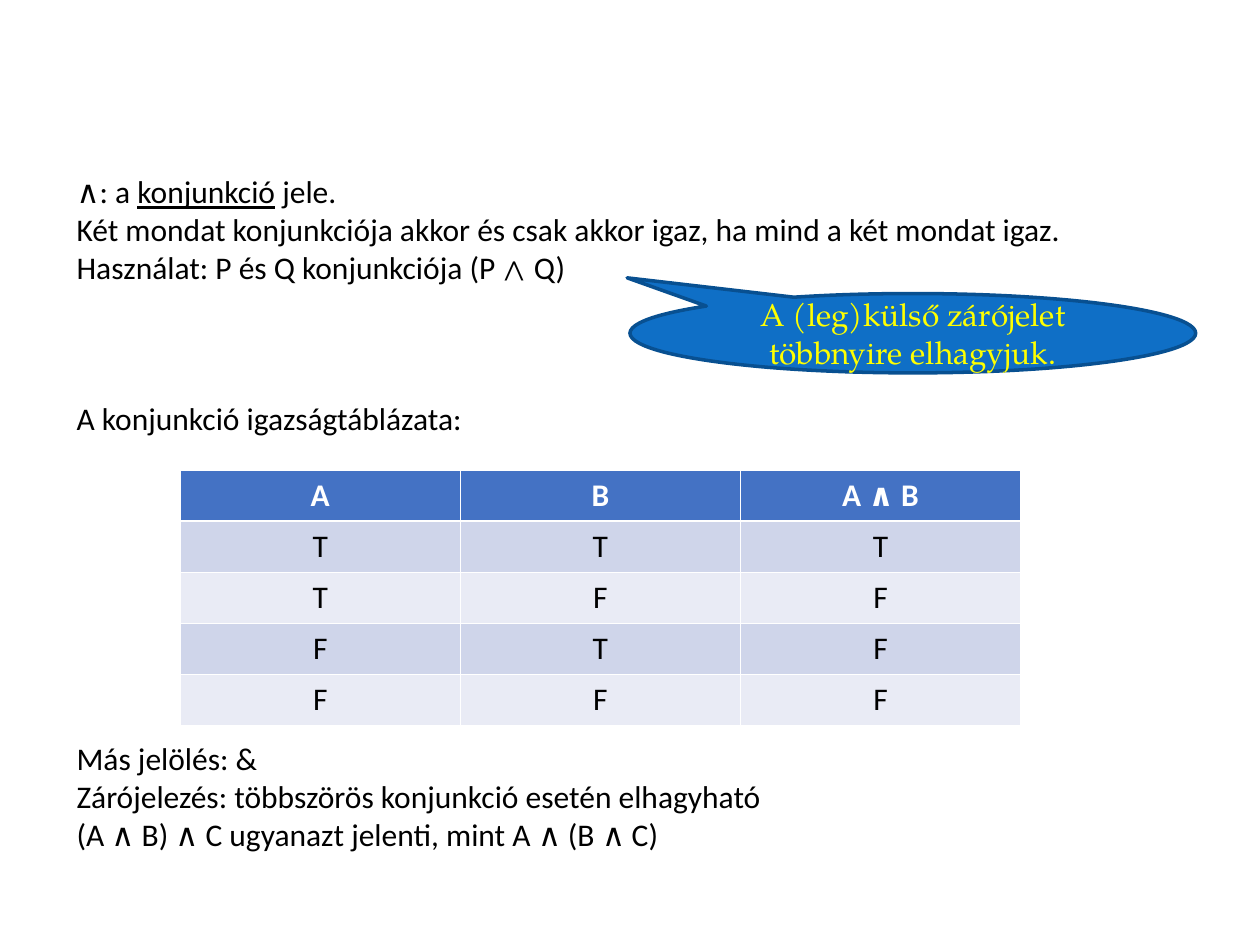
from pptx import Presentation
from pptx.dml.color import RGBColor
from pptx.enum.shapes import MSO_SHAPE
from pptx.enum.text import MSO_ANCHOR, PP_ALIGN
from pptx.util import Inches, Pt

CALLOUT = MSO_SHAPE.OVAL_CALLOUT
MIDDLE = MSO_ANCHOR.MIDDLE
CENTER = PP_ALIGN.CENTER

COLORS = {
    "text": "000000",
    "white": "FFFFFF",
    "header": "4472C4",
    "band_dark": "CFD5EA",
    "band_light": "E9EBF5",
    "callout": "0F6FC6",
    "callout_line": "085091",
    "callout_text": "FFFF00",
}
BODY_FONT = "Calibri"
SERIF_FONT = "TeX Gyre Pagella"
LINE_PT = 21.6

# Each paragraph: number of lines of space above it, then its (text, format) runs
BODY = [
    (0, [("∧: a ", {}), ("konjunkció", {"underline": True}), (" jele.", {})]),
    (0, [("Két mondat konjunkciója akkor és csak akkor igaz, "
          "ha mind a két mondat igaz.", {})]),
    (0, [("Használat: P és Q konjunkciója (P ", {}),
         ("∧", {"name": SERIF_FONT}), (" Q)", {})]),
    (3, [("A konjunkció igazságtáblázata:", {})]),
    (8, [("Más jelölés: &", {})]),
    (0, [("Zárójelezés: többszörös konjunkció esetén elhagyható", {})]),
    (0, [("(A ∧ B) ∧ C ugyanazt jelenti, mint A ∧ (B ∧ C)", {})]),
]
TRUTH_TABLE = ["A", "B", "A ∧ B"], *(
    [a, b, "T" if a == b == "T" else "F"] for a in "TF" for b in "TF")


def rgb(name):
    return RGBColor.from_string(COLORS[name])


def add_run(p, text, color="text", **formats):
    r = p.add_run()
    r.text = text
    r.font.color.rgb = rgb(color)
    for key, value in {"name": BODY_FONT, "size": Pt(18), **formats}.items():
        setattr(r.font, key, value)


def add_body(s):
    box = s.shapes.add_textbox(Inches(0.51), Inches(1.32), Inches(8.5), Inches(5.86))
    tf = box.text_frame
    tf.word_wrap = True
    for i, (gap, runs) in enumerate(BODY):
        p = tf.add_paragraph() if i else tf.paragraphs[0]
        p.line_spacing = Pt(LINE_PT)
        p.space_before = Pt(gap * LINE_PT)
        for text, formats in runs:
            add_run(p, text, **formats)


def add_callout(s, text):
    sp = s.shapes.add_shape(CALLOUT, Inches(5), Inches(2.33), Inches(4.49), Inches(0.63))
    sp.adjustments[0], sp.adjustments[1] = -0.505, -0.698
    sp.shadow.inherit = False
    sp.fill.solid()
    sp.fill.fore_color.rgb = rgb("callout")
    sp.line.color.rgb = rgb("callout_line")
    sp.line.width = Pt(2)
    tf = sp.text_frame
    tf.word_wrap = True
    tf.vertical_anchor = MIDDLE
    p = tf.paragraphs[0]
    p.alignment = CENTER
    add_run(p, text, "callout_text", name=SERIF_FONT)


def add_truth_table(s, rows):
    """Add the table; its default style supplies the white cell borders."""
    frame = s.shapes.add_table(len(rows), len(rows[0]), Inches(1.43), Inches(3.73),
                               Inches(6.67), Inches(2.03))
    for i, row in enumerate(rows):
        header = i == 0
        band = "header" if header else "band_dark" if i % 2 else "band_light"
        for j, text in enumerate(row):
            cell = frame.table.cell(i, j)
            cell.fill.solid()
            cell.fill.fore_color.rgb = rgb(band)
            p = cell.text_frame.paragraphs[0]
            p.alignment = CENTER
            add_run(p, text, "white" if header else "text", bold=header)


def main():
    prs = Presentation()
    prs.slide_width, prs.slide_height = Inches(10), Inches(7.5)
    s = prs.slides.add_slide(prs.slide_layouts[6])
    add_body(s)
    add_callout(s, "A (leg)külső zárójelet többnyire elhagyjuk.")
    add_truth_table(s, TRUTH_TABLE)
    prs.save("out.pptx")


if __name__ == "__main__":
    main()
